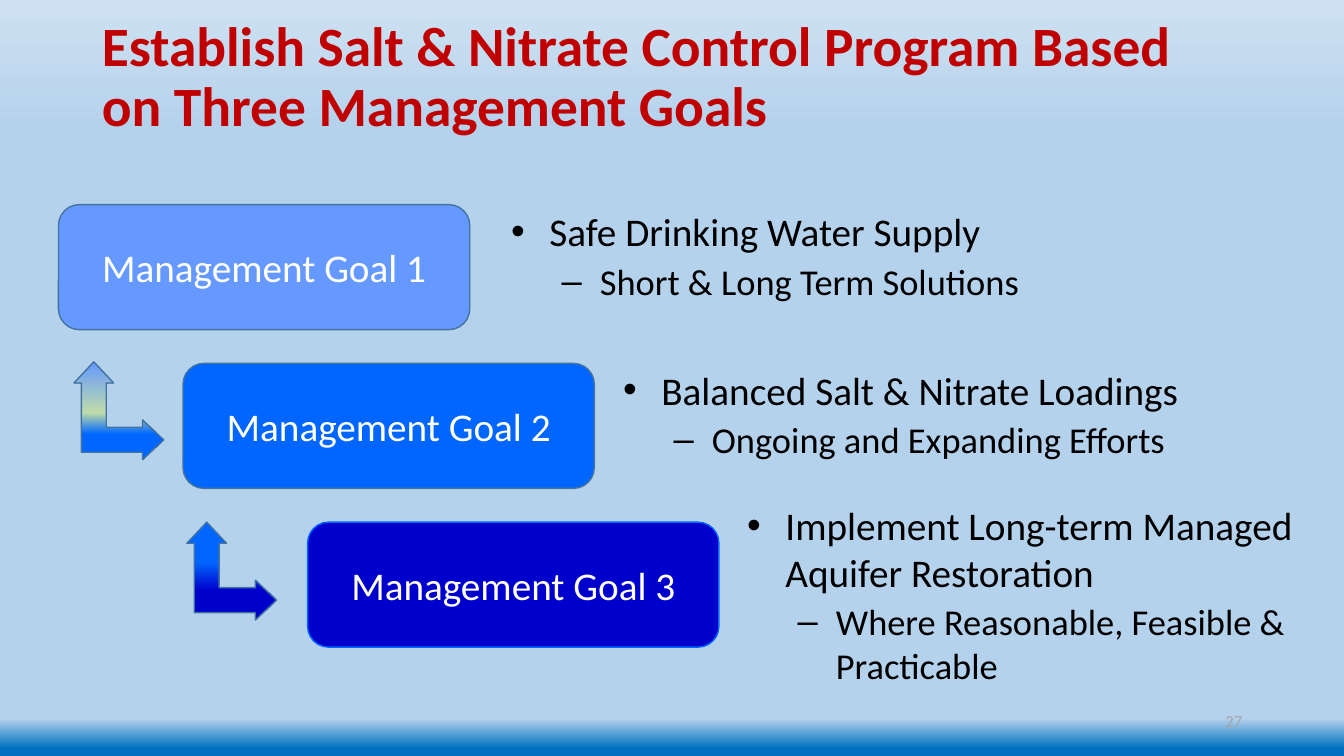
from dataclasses import dataclass

from lxml import etree
from pptx import Presentation
from pptx import util as u
from pptx.dml.color import RGBColor
from pptx.dml.fill import FillFormat
from pptx.enum import shapes as sh, text as tx
from pptx.oxml.ns import qn

Stops = tuple[tuple[int, str], ...]
WIDE, HIGH = u.Inches(13.33), u.Inches(7.5)


@dataclass(frozen=True)
class Theme:
    face: str = "Calibri"
    title: float = 39.6
    main: int = 28
    sub: int = 26
    small: int = 12
    red: str = "C00000"
    ink: str = "000000"
    white: str = "FFFFFF"
    gray: str = "A6A6A6"
    edge: str = "43739E"
    sky: Stops = ((1, "0070C0"), (5, "B5D2EC"), (83, "B5D2EC"), (100, "CEE1F2"))


@dataclass(frozen=True)
class Area:
    """A rectangle in percent of the slide's width and height."""
    left: float
    top: float
    width: float
    height: float

    def step(self, n: int, right: float, down: float) -> "Area":
        return Area(self.left + n * right, self.top + n * down, self.width, self.height)

    def box(self) -> tuple[int, int, int, int]:
        return (round(WIDE * self.left / 100), round(HIGH * self.top / 100),
                round(WIDE * self.width / 100), round(HIGH * self.height / 100))


@dataclass(frozen=True)
class Goal:
    name: str
    fill: str
    edge: str
    main: str
    sub: str
    area: Area
    slot: int


THEME = Theme()
TITLE = Area(6.83, 3.07, 86.27, 14.67)
CARD = Area(4.35, 27.07, 30.6, 16.53)
ARROW = Area(5.2, 48.4, 7.28, 11.87)
NUMBER = Area(70.67, 92.67, 22.5, 5.33)
GOALS = (
    Goal("Management Goal 1", "6699FF", THEME.edge, "Safe Drinking Water Supply",
         "Short & Long Term Solutions", Area(37.28, 26.8, 44.64, 14.53), 1),
    Goal("Management Goal 2", "0066FF", THEME.edge, "Balanced Salt & Nitrate Loadings",
         "Ongoing and Expanding Efforts", Area(45.61, 47.73, 50.56, 14.53), 2),
    Goal("Management Goal 3", "0000CC", "0066FF",
         "Implement Long-term Managed Aquifer Restoration",
         "Where Reasonable, Feasible & Practicable", Area(54.84, 65.6, 43.66, 27.07), 3),
)
BLENDS: tuple[Stops, ...] = (
    ((0, "6699FF"), (52, "BEDCAA"), (74, "0066FF"), (100, "0066FF")),
    ((0, "0066FF"), (41, "0066FF"), (70, "0000CC"), (100, "0000CC")),
)


def place(shape, area: Area) -> None:
    shape.left, shape.top, shape.width, shape.height = area.box()


def style(para, size: float, color: str, bold: bool = False) -> None:
    font = para.font
    font.name, font.size, font.bold = THEME.face, u.Pt(size), bold
    font.color.rgb = RGBColor.from_string(color)


def blend(fill: FillFormat, root, stops: Stops, angle: int) -> None:
    """Fill with any number of colour stops; root holds the fill's XML."""
    fill.gradient()
    fill.gradient_angle = angle
    ramp = root.find(".//" + qn("a:gsLst"))
    for old in list(ramp):
        ramp.remove(old)
    for share, color in stops:
        stop = etree.SubElement(ramp, qn("a:gs"), pos=str(share * 1000))
        etree.SubElement(stop, qn("a:srgbClr"), val=color)


def bullet(para, sign: str, indent: float) -> None:
    para.space_before = u.Pt(3)
    props = para._p.get_or_add_pPr()
    props.set("marL", str(u.Inches(indent)))
    props.set("indent", str(u.Inches(-0.38)))
    etree.SubElement(props, qn("a:buFont"), typeface="Arial")
    etree.SubElement(props, qn("a:buChar"), char=sign)


def block(slide, kind: sh.MSO_SHAPE, area: Area, edge: str):
    shape = slide.shapes.add_shape(kind, *area.box())
    shape.shadow.inherit = False
    shape.line.color.rgb = RGBColor.from_string(edge)
    shape.line.width = u.Pt(1)
    return shape


def card(slide, goal: Goal, area: Area) -> None:
    shape = block(slide, sh.MSO_SHAPE.ROUNDED_RECTANGLE, area, goal.edge)
    shape.fill.solid()
    shape.fill.fore_color.rgb = RGBColor.from_string(goal.fill)
    frame = shape.text_frame
    frame.text = goal.name
    frame.vertical_anchor = tx.MSO_ANCHOR.MIDDLE
    frame.paragraphs[0].alignment = tx.PP_ALIGN.CENTER
    style(frame.paragraphs[0], THEME.main, THEME.white)


def points(slide, goal: Goal) -> None:
    body = slide.placeholders[goal.slot]
    place(body, goal.area)
    frame = body.text_frame
    frame.text = f"{goal.main}\n{goal.sub}"
    frame.auto_size = tx.MSO_AUTO_SIZE.SHAPE_TO_FIT_TEXT
    frame.vertical_anchor = tx.MSO_ANCHOR.TOP
    looks = (("•", 0.38, THEME.main), ("‒", 0.88, THEME.sub))
    for level, (para, (sign, indent, size)) in enumerate(zip(frame.paragraphs, looks)):
        para.level = level
        bullet(para, sign, indent)
        style(para, size, THEME.ink)


def arrow(slide, area: Area, stops: Stops) -> None:
    shape = block(slide, sh.MSO_SHAPE.LEFT_UP_ARROW, area, THEME.edge)
    shape.rotation = 90
    for n, value in enumerate((0.278, 0.221, 0.236)):
        shape.adjustments[n] = value
    blend(shape.fill, shape.element, stops, 0)


def head(slide) -> None:
    title = slide.shapes.title
    place(title, TITLE)
    frame = title.text_frame
    frame.text = "Establish Salt & Nitrate Control Program Based on Three Management Goals"
    frame.auto_size = tx.MSO_AUTO_SIZE.NONE
    frame.vertical_anchor = tx.MSO_ANCHOR.MIDDLE
    para = frame.paragraphs[0]
    para.alignment, para.line_spacing = tx.PP_ALIGN.LEFT, 0.9
    style(para, THEME.title, THEME.red, True)


def number(slide) -> None:
    frame = slide.shapes.add_textbox(*NUMBER.box()).text_frame
    frame.word_wrap = True
    frame.text = "27"
    frame.vertical_anchor = tx.MSO_ANCHOR.MIDDLE
    frame.paragraphs[0].alignment = tx.PP_ALIGN.RIGHT
    style(frame.paragraphs[0], THEME.small, THEME.gray)


def main() -> None:
    deck = Presentation()
    deck.slide_width, deck.slide_height = WIDE, HIGH
    slide = deck.slides.add_slide(deck.slide_layouts.get_by_name("Comparison"))
    blend(slide.background.fill, slide.element, THEME.sky, 90)
    spare = slide.placeholders[4].element
    spare.getparent().remove(spare)
    head(slide)
    for n, goal in enumerate(GOALS):
        points(slide, goal)
        card(slide, goal, CARD.step(n, 9.27, 21))
    for n, stops in enumerate(BLENDS):
        arrow(slide, ARROW.step(n, 8.4, 21.2), stops)
    number(slide)
    deck.save("out.pptx")


if __name__ == "__main__":
    main()
